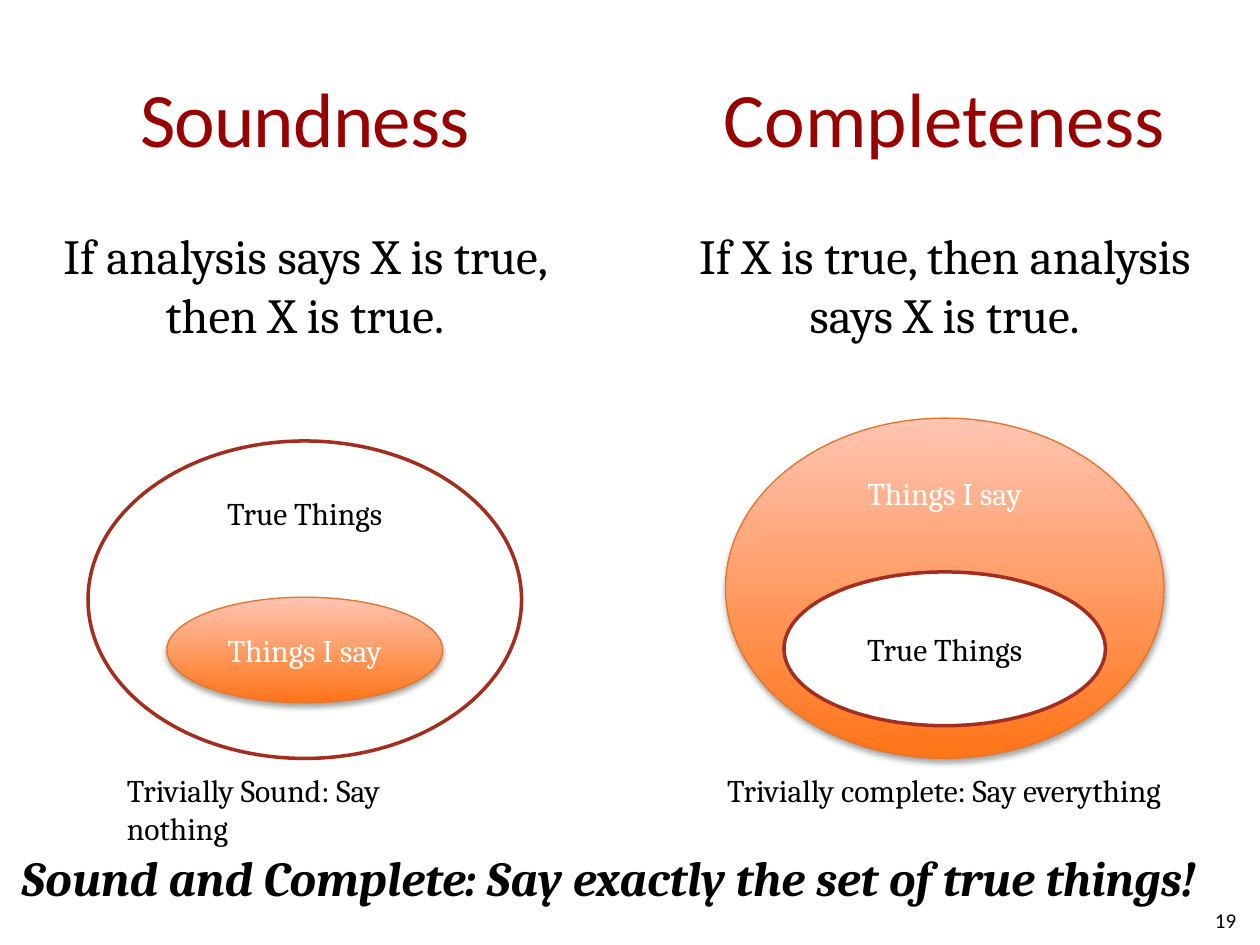
import pptx
import pptx.util
import pptx.dml.color
import pptx.enum.shapes
import pptx.enum.text
import pptx.oxml
import pptx.oxml.ns

Cm, Pt = pptx.util.Cm, pptx.util.Pt
ALIGN = pptx.enum.text.PP_ALIGN
ANCHOR = pptx.enum.text.MSO_ANCHOR

COLORS = {
    "title": "990000",
    "text": "000000",
    "light": "FFFFFE",
    "true_line": "A32D1F",
    "say_line": "E3752D",
    "say_bottom": "FF7417",
    "say_top": "FFC4B2",
}

SHADOW = (
    f'<a:outerShdw {pptx.oxml.ns.nsdecls("a")} blurRad="40000" dist="23000" '
    'dir="5400000" rotWithShape="0"><a:srgbClr val="000000">'
    '<a:alpha val="35000"/></a:srgbClr></a:outerShdw>'
)


def rgb(name):
    return pptx.dml.color.RGBColor.from_string(COLORS[name])


def add_run(tf, text, size, color="text", font="Cambria", align=ALIGN.CENTER):
    p = tf.paragraphs[0]
    p.alignment = align
    r = p.add_run()
    r.text = text
    r.font.size = Pt(size)
    r.font.name = font
    r.font.color.rgb = rgb(color)
    return r


def add_text(s, box, text, size, anchor=ANCHOR.TOP, wrap=True, **style):
    tf = s.shapes.add_textbox(*map(Cm, box)).text_frame
    tf.word_wrap = wrap
    tf.vertical_anchor = anchor
    return add_run(tf, text, size, **style), tf.paragraphs[0]


def centered(box, top, width, height):
    left, y, w, _ = box
    return left + (w - width) / 2, y + top, width, height


def add_set(s, box, kind, anchor):
    sp = s.shapes.add_shape(pptx.enum.shapes.MSO_SHAPE.OVAL, *map(Cm, box))
    sp.shadow.inherit = False
    if kind == "say":
        sp.fill.gradient()
        sp.fill.gradient_angle = 90
        for stop, name in zip(sp.fill.gradient_stops, ("say_bottom", "say_top")):
            stop.color.rgb = rgb(name)
        effects = sp._element.spPr.find(pptx.oxml.ns.qn("a:effectLst"))
        effects.append(pptx.oxml.parse_xml(SHADOW))
        text, color, line, width = "Things I say", "light", "say_line", 0.75
    else:
        sp.fill.solid()
        sp.fill.fore_color.rgb = rgb("light")
        text, color, line, width = "True Things", "text", "true_line", 2
    sp.line.color.rgb = rgb(line)
    sp.line.width = Pt(width)
    sp.text_frame.vertical_anchor = anchor
    add_run(sp.text_frame, text, 18, color)


def add_panel(s, box, title, spacing, definition, outer, inner, caption, caption_width, wrap):
    r, _ = add_text(s, centered(box, 0, box[2], 3.18), title, 44, ANCHOR.MIDDLE,
                    color="title", font="Calibri")
    if spacing:
        r._r.get_or_add_rPr().set("spc", str(spacing))
    _, p = add_text(s, centered(box, 3.66, 10.77, 12.57), definition, 28)
    p.space_before = Pt(5.6)
    for (kind, *size), anchor in ((outer, ANCHOR.TOP), (inner, ANCHOR.MIDDLE)):
        add_set(s, centered(box, *size), kind, anchor)
    add_text(s, centered(box, 14.66, caption_width, 1.02), caption, 18,
             wrap=wrap, align=ALIGN.LEFT)


def add_footer(s, box):
    left, top, width, _ = box
    r, _ = add_text(s, (left, top, width, 1.45),
                    "Sound and Complete: Say exactly the set of true things!",
                    28, align=ALIGN.LEFT)
    r.font.bold = r.font.italic = True
    add_text(s, (left + width - 6, top + 1.06, 5.92, 1.02), "19", 12,
             ANCHOR.MIDDLE, font="Calibri", align=ALIGN.RIGHT)


def main():
    prs = pptx.Presentation()
    prs.slide_width, prs.slide_height = Cm(25.4), Cm(19.05)
    s = prs.slides.add_slide(prs.slide_layouts[6])
    add_panel(s, (0, 0.76, 12.29, 16.23), "Soundness", -50,
              "If analysis says X is true, then X is true.",
              ("true", 8.13, 8.74, 6.4), ("say", 11.28, 5.56, 2.13),
              "Trivially Sound: Say nothing", 7.67, True)
    add_panel(s, (12.9, 0.76, 12.29, 16.23), "Completeness", 0,
              "If X is true, then analysis says X is true.",
              ("say", 7.67, 8.84, 6.86), ("true", 10.77, 6.48, 3.1),
              "Trivially complete: Say everything", 9.27, False)
    add_footer(s, (0.18, 16.97, 25.07, 2.08))
    prs.save("out.pptx")


if __name__ == "__main__":
    main()
